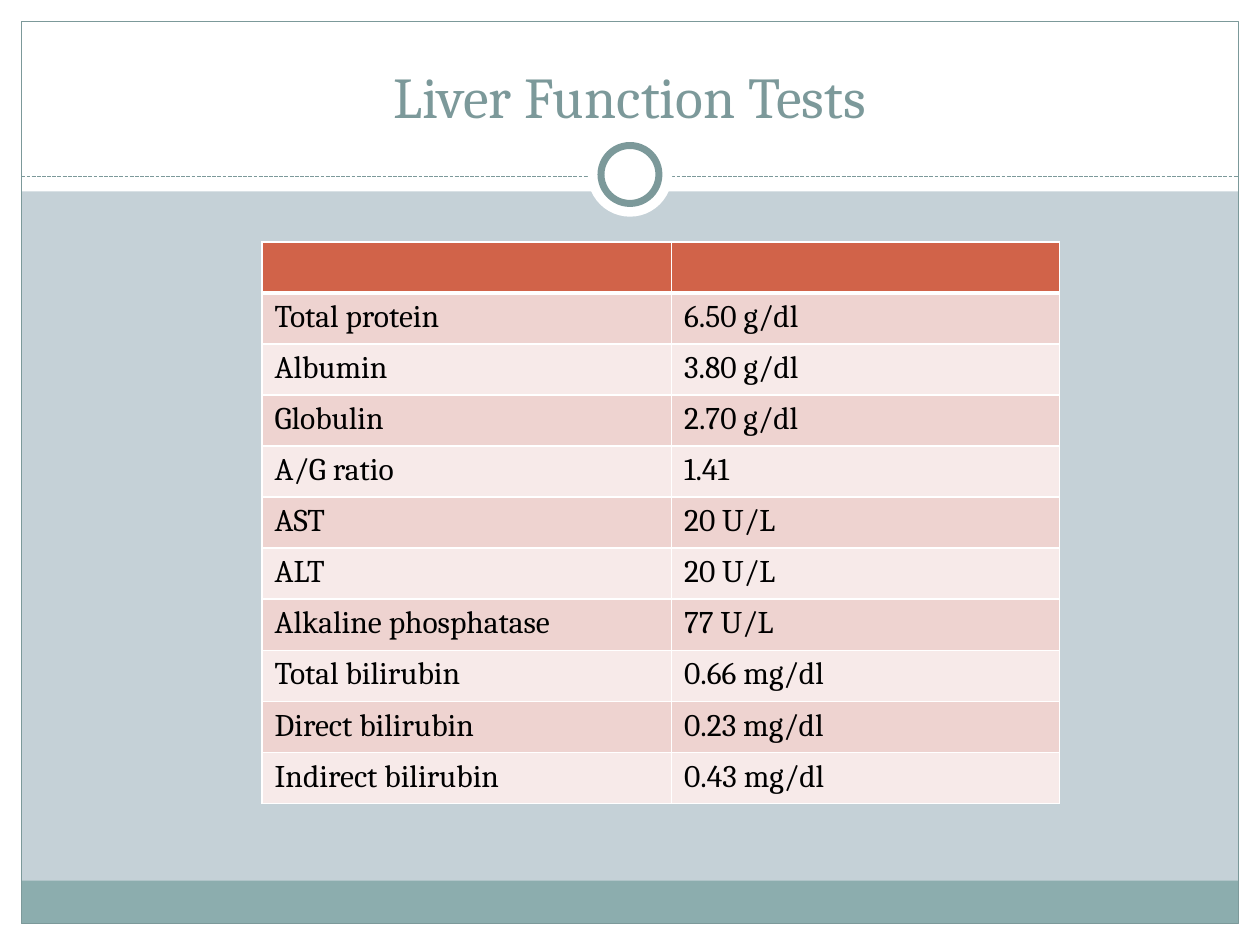
from lxml import etree
from pptx import Presentation
from pptx import util as u
from pptx.dml.color import RGBColor
from pptx.enum import dml, shapes, text
from pptx.oxml import ns

COLORS = {
    "background": "C5D1D7",
    "paper": "FFFFFF",
    "footer": "8CADAE",
    "accent": "7C999A",
    "header": "D16349",
    "odd": "EED3D0",
    "even": "F7EAE9",
    "ink": "000000",
}
FONT = "Cambria"

# The slide is a grid of 100 columns by 75 rows of square units.
COLUMNS, ROWS = 100, 75
UNIT = u.Inches(0.1)
MARGIN = 1.7
FRAME_WIDTH = COLUMNS - 2 * MARGIN
BAND_HEIGHT = 15.2
RULE_ROW = 14
RING_ROW = 13.85

RESULTS = [
    ("Total protein", "6.50 g/dl"),
    ("Albumin", "3.80 g/dl"),
    ("Globulin", "2.70 g/dl"),
    ("A/G ratio", "1.41"),
    ("AST", "20 U/L"),
    ("ALT", "20 U/L"),
    ("Alkaline phosphatase", "77 U/L"),
    ("Total bilirubin", "0.66 mg/dl"),
    ("Direct bilirubin", "0.23 mg/dl"),
    ("Indirect bilirubin", "0.43 mg/dl"),
]


def color(name):
    return RGBColor.from_string(COLORS[name])


def grid(*units):
    return [round(unit * UNIT) for unit in units]


def apply_format(target, values):
    for name, value in values.items():
        setattr(target, name, value)


def set_font(font, size, ink):
    apply_format(font, {"name": FONT, "size": u.Pt(size)})
    font.color.rgb = color(ink)


def add_shape(page, kind, place, fill=None, line=None, weight=0.75):
    """Add a preset shape; without fill or line that part stays clear."""
    shape = page.shapes.add_shape(kind, *grid(*place))
    shape.shadow.inherit = False
    if fill:
        shape.fill.solid()
        shape.fill.fore_color.rgb = color(fill)
    else:
        shape.fill.background()
    if line:
        shape.line.color.rgb = color(line)
        shape.line.width = u.Pt(weight)
    else:
        shape.line.fill.background()


def add_circle(page, diameter, **style):
    """Add a white circle centred where the rule crosses the middle."""
    place = (COLUMNS / 2 - diameter / 2, RING_ROW - diameter / 2, diameter, diameter)
    add_shape(page, shapes.MSO_SHAPE.OVAL, place, "paper", **style)


def add_rule(page):
    rule = page.shapes.add_connector(
        shapes.MSO_CONNECTOR.STRAIGHT,
        *grid(MARGIN, RULE_ROW, COLUMNS - MARGIN, RULE_ROW))
    rule.line.color.rgb = color("accent")
    apply_format(rule.line, {"width": u.Pt(0.75),
                             "dash_style": dml.MSO_LINE.SQUARE_DOT})
    properties = rule._element.spPr
    properties.find(ns.qn("a:ln")).find(ns.qn("a:prstDash")).set("val", "sysDash")
    etree.SubElement(properties, ns.qn("a:effectLst"))


def add_frame(page):
    rectangle = shapes.MSO_SHAPE.RECTANGLE
    footer_height = 3.4
    for place in (
        (0, ROWS - MARGIN, COLUMNS, MARGIN),
        (0, 0, COLUMNS, BAND_HEIGHT),
        (0, 0, MARGIN, ROWS),
        (COLUMNS - MARGIN, 0, MARGIN, ROWS),
    ):
        add_shape(page, rectangle, place, "paper")
    footer_top = ROWS - MARGIN - footer_height
    add_shape(page, rectangle, (MARGIN, footer_top, FRAME_WIDTH, footer_height), "footer")
    add_shape(page, rectangle, (MARGIN, MARGIN, FRAME_WIDTH, ROWS - 2 * MARGIN),
              line="accent")


def add_title(page, title):
    box = page.shapes.add_textbox(*grid(3.33, 2.5, 93.33, 8.33))
    apply_format(box.text_frame, {"word_wrap": True,
                                  "vertical_anchor": text.MSO_ANCHOR.BOTTOM})
    para = box.text_frame.paragraphs[0]
    para.alignment = text.PP_ALIGN.CENTER
    span = para.add_run()
    span.text = title
    set_font(span.font, 33, "accent")


def set_borders(cell, bottom):
    """Draw white borders, one point wide except for the bottom one."""
    properties = cell._tc.get_or_add_tcPr()
    widths = {"lnL": 1, "lnR": 1, "lnT": 1, "lnB": bottom}
    for index, (side, points) in enumerate(widths.items()):
        border = etree.Element(ns.qn(f"a:{side}"), w=str(u.Pt(points)))
        fill = etree.SubElement(border, ns.qn("a:solidFill"))
        etree.SubElement(fill, ns.qn("a:srgbClr"), val=COLORS["paper"])
        properties.insert(index, border)


def add_results(page):
    rows = [("", "")] + RESULTS
    widths = grid(32.5, 30.8)
    row_height = 44.6 / len(rows)
    table = page.shapes.add_table(
        len(rows), len(widths), *grid(20.8, 19.2, 63.3, 44.6)).table
    for column, width in zip(table.columns, widths):
        column.width = width
    for index, words in enumerate(rows):
        table.rows[index].height = grid(row_height)[0]
        fill = "header" if index == 0 else "odd" if index % 2 else "even"
        for cell, word in zip(table.rows[index].cells, words):
            cell.fill.solid()
            cell.fill.fore_color.rgb = color(fill)
            set_borders(cell, 3 if index == 0 else 1)
            if word:
                span = cell.text_frame.paragraphs[0].add_run()
                span.text = word
                set_font(span.font, 18, "ink")


def main():
    deck = Presentation()
    apply_format(deck, {"slide_width": COLUMNS * UNIT, "slide_height": ROWS * UNIT})
    page = deck.slides.add_slide(deck.slide_layouts[6])
    page.background.fill.solid()
    page.background.fill.fore_color.rgb = color("background")
    add_frame(page)
    add_rule(page)
    add_circle(page, 6.7)
    add_circle(page, 4.6, line="accent", weight=4)
    add_title(page, "Liver Function Tests")
    add_results(page)
    deck.save("out.pptx")


if __name__ == "__main__":
    main()
